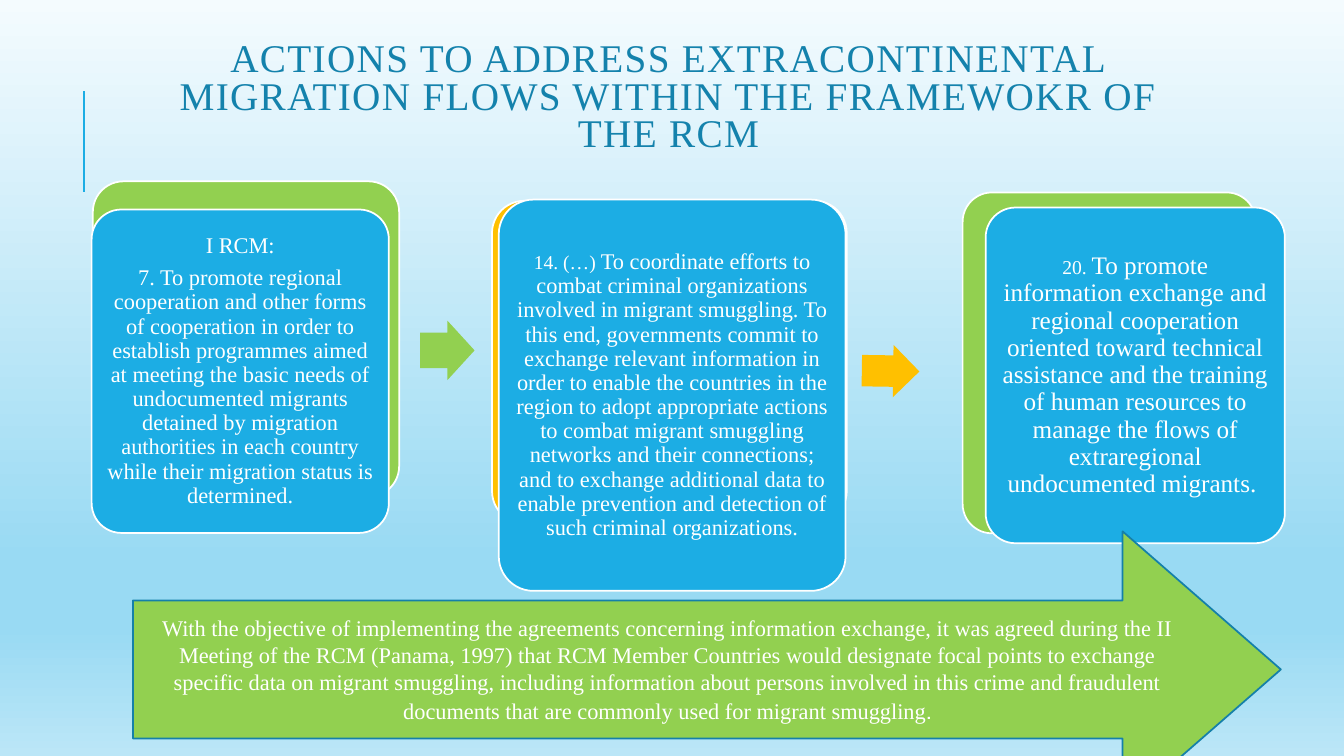
from copy import deepcopy

from lxml.etree import SubElement
from pptx import Presentation
from pptx.dml.color import RGBColor
from pptx.enum.shapes import MSO_CONNECTOR, MSO_SHAPE
from pptx.enum.text import MSO_ANCHOR, PP_ALIGN
from pptx.oxml.ns import qn
from pptx.util import Cm, Pt

COLORS = {
    "blue": "1CADE4", "title": "1482AC", "outline": "1580A9",
    "green": "92D050", "amber": "FFC000", "white": "FFFFFF",
}
BACKGROUND_STOPS = [(0, "F4FBFE"), (0.74, "99DAF3"), (0.83, "99DAF3"), (1, "BBE6F7")]
SERIF = "Times New Roman"

TITLE = ("ACTIONS TO ADDRESS EXTRACONTINENTAL MIGRATION FLOWS "
         "WITHIN THE FRAMEWOKR OF THE RCM")
STEPS = [
    {"box": (2.31, 5.28, 7.49, 8.15), "back": (0.03, -0.71, 7.72, 7.95), "color": "green",
     "text": [[("I RCM:", 16)],
              [("7. To promote regional cooperation and other forms of cooperation in order to "
                "establish programmes aimed at meeting the basic needs of undocumented migrants "
                "detained by migration authorities in each country while their migration status "
                "is determined.", 16)]]},
    {"box": (12.57, 5.03, 8.74, 9.86), "back": (-0.17, 0.03, 8.94, 8.13), "color": "amber",
     "text": [[("14. (…) ", 14),
               ("To coordinate efforts to combat criminal organizations involved in migrant "
                "smuggling. To this end, governments commit to exchange relevant information in "
                "order to enable the countries in the region to adopt appropriate actions to "
                "combat migrant smuggling networks and their connections; and to exchange "
                "additional data to enable prevention and detection of such criminal "
                "organizations.", 16)]]},
    {"box": (24.84, 5.23, 7.54, 8.46), "back": (-0.58, -0.38, 7.39, 8.59), "color": "green",
     "text": [[("20. ", 14),
               ("To promote information exchange and regional cooperation oriented toward "
                "technical assistance and the training of human resources to manage the flows of "
                "extraregional undocumented migrants. ", 18)]]},
]
STEP_ARROWS = [((10.59, 8.08, 1.37, 1.5), "green", 0), ((21.72, 8.69, 1.45, 1.32), "amber", 0.9)]
BANNER = ("With the objective of implementing the agreements concerning information exchange, it "
          "was agreed during the II Meeting of the RCM (Panama, 1997) that RCM Member Countries "
          "would designate focal points to exchange specific data on migrant smuggling, including "
          "information about persons involved in this crime and fraudulent documents that are "
          "commonly used for migrant smuggling")


def rgb(name):
    """Return the palette colour with the given name."""
    return RGBColor.from_string(COLORS[name])


def add_run(paragraph, text, size, color="white", font=SERIF):
    """Append one formatted run to a paragraph."""
    run = paragraph.add_run()
    run.text = text
    run.font.size = Pt(size)
    run.font.name = font
    run.font.color.rgb = rgb(color)


def add_block(slide, kind, box, fill, line=None, adjustments=()):
    """Add a flat preset shape in the given box."""
    shape = slide.shapes.add_shape(kind, *map(Cm, box))
    shape.shadow.inherit = False
    shape.fill.solid()
    shape.fill.fore_color.rgb = rgb(fill)
    if line:
        shape.line.color.rgb = rgb(line)
        shape.line.width = Pt(1.25)
    else:
        shape.line.fill.background()
    for index, value in enumerate(adjustments):
        shape.adjustments[index] = value
    return shape


def paint_background(slide):
    """Fill the slide with a vertical gradient."""
    fill = slide.background.fill
    fill.gradient()
    fill.gradient_angle = 270
    stop_list = next(slide.element.iter(qn("a:gsLst")))
    for _ in range(len(BACKGROUND_STOPS) - len(stop_list)):
        stop_list.append(deepcopy(stop_list[0]))
    for stop, (position, color) in zip(fill.gradient_stops, BACKGROUND_STOPS):
        stop.position = position
        stop.color.rgb = RGBColor.from_string(color)


def add_title(slide, box):
    """Add the centred title and the accent line to its left."""
    left, top, width, height = box
    shape = slide.shapes.add_textbox(*map(Cm, box))
    frame = shape.text_frame
    frame.word_wrap = True
    frame.vertical_anchor = MSO_ANCHOR.MIDDLE
    paragraph = frame.paragraphs[0]
    paragraph.alignment = PP_ALIGN.CENTER
    paragraph.line_spacing = 0.8
    add_run(paragraph, TITLE, 28, "title")
    for properties in shape.element.iter(qn("a:rPr")):
        properties.set("spc", "100")
    line_left, line_top = left - 1.24, top + 1.88
    accent = slide.shapes.add_connector(
        MSO_CONNECTOR.STRAIGHT,
        Cm(line_left), Cm(line_top + 2.54), Cm(line_left), Cm(line_top))
    accent.line.color.rgb = rgb("blue")
    accent.line.width = Pt(1.5)
    SubElement(accent.element.spPr, qn("a:effectLst"))


def add_step(slide, box, back, color, text):
    """Add a blue text card in the box with a coloured card behind it."""
    left, top = box[:2]
    shift_x, shift_y, back_width, back_height = back
    back_box = (left + shift_x, top + shift_y, back_width, back_height)
    add_block(slide, MSO_SHAPE.ROUNDED_RECTANGLE, back_box, color, "white", [0.1])
    card = add_block(slide, MSO_SHAPE.ROUNDED_RECTANGLE, box, "blue", "white", [0.1])
    frame = card.text_frame
    frame.word_wrap = True
    frame.vertical_anchor = MSO_ANCHOR.MIDDLE
    frame.margin_left = frame.margin_right = Cm(0.16)
    frame.margin_top = frame.margin_bottom = Cm(0.16)
    for index, runs in enumerate(text):
        paragraph = frame.add_paragraph() if index else frame.paragraphs[0]
        paragraph.alignment = PP_ALIGN.CENTER
        paragraph.line_spacing = 0.9
        paragraph.space_after = Pt(5.6)
        for words, size in runs:
            add_run(paragraph, words, size)


def add_step_arrow(slide, box, color, rotation):
    """Add a small arrow between two steps."""
    arrow = add_block(slide, MSO_SHAPE.RIGHT_ARROW, box, color, adjustments=[0.6, 0.5])
    arrow.rotation = rotation


def add_banner(slide, box):
    """Add the large arrow with the closing statement."""
    arrow = add_block(slide, MSO_SHAPE.RIGHT_ARROW, box, "green", "outline", [0.5, 0.573])
    frame = arrow.text_frame
    frame.word_wrap = True
    frame.vertical_anchor = MSO_ANCHOR.MIDDLE
    paragraph = frame.paragraphs[0]
    paragraph.alignment = PP_ALIGN.CENTER
    add_run(paragraph, BANNER, 16)
    add_run(paragraph, ".", 18, font="Cabin")


def main():
    """Build and save the presentation."""
    presentation = Presentation()
    presentation.slide_width = Cm(33.87)
    presentation.slide_height = Cm(19.05)
    slide = presentation.slides.add_slide(presentation.slide_layouts[6])
    paint_background(slide)
    add_title(slide, (3.35, 0.41, 27, 4.17))
    for step in STEPS:
        add_step(slide, **step)
    for box, color, rotation in STEP_ARROWS:
        add_step_arrow(slide, box, color, rotation)
    add_banner(slide, (3.35, 13.39, 28.93, 6.96))
    presentation.save("out.pptx")


if __name__ == "__main__":
    main()
